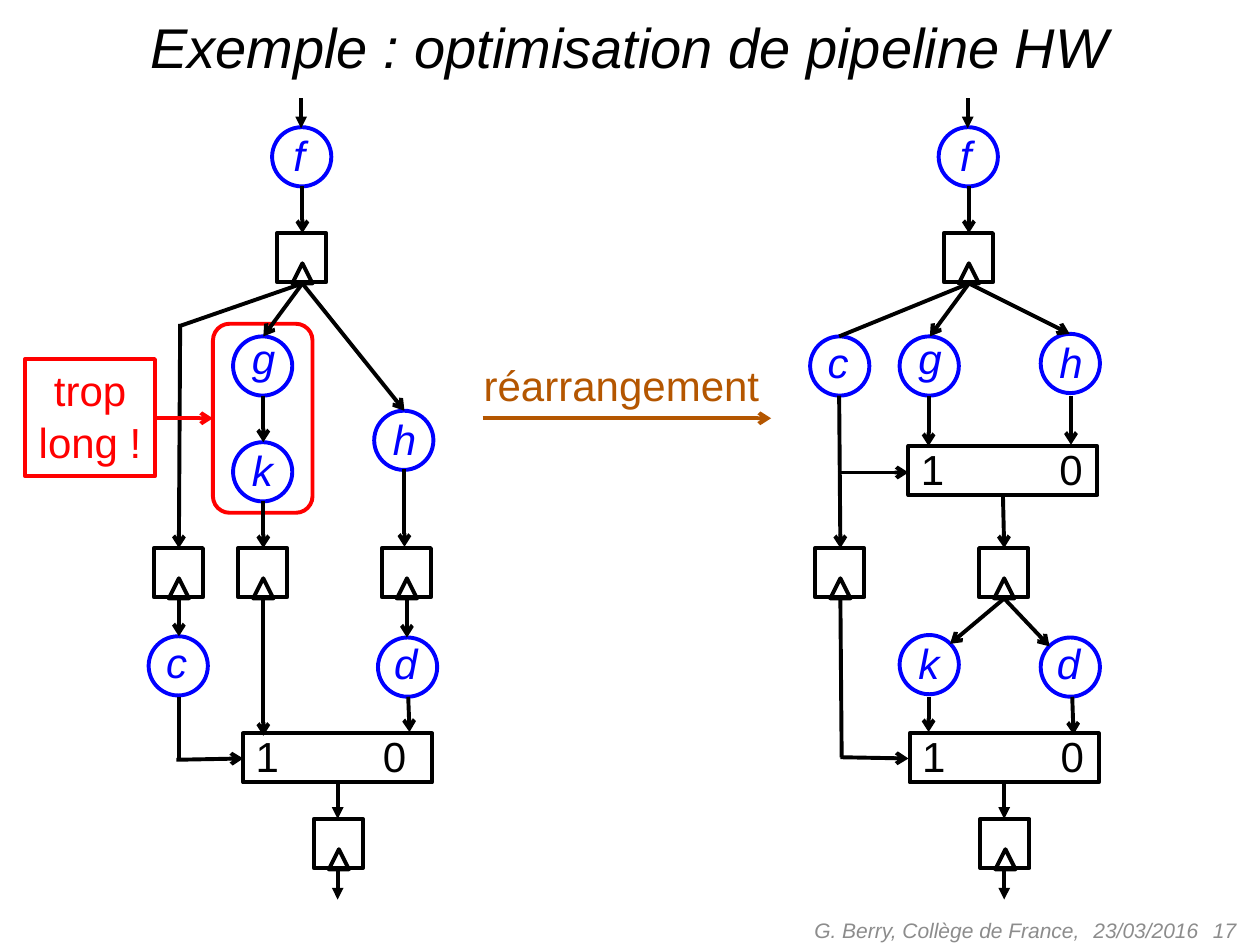
from lxml import etree
from pptx import Presentation
from pptx.dml.color import RGBColor
from pptx.enum.shapes import MSO_CONNECTOR as LINE, MSO_SHAPE as SHAPE
from pptx.enum.text import MSO_ANCHOR as ANCHOR, PP_ALIGN as ALIGN
from pptx.oxml.ns import qn
from pptx.util import Cm, Pt

INCH = 2.54
SHIFT = 5.29
COLORS = {"ink": "000000", "node": "0000FF", "alert": "FF0000",
          "step": "B45600", "footer": "8C8C8C"}
LABEL = {"margin_left": Cm(0.25), "margin_right": Cm(0.25),
         "margin_top": Cm(0.05), "margin_bottom": Cm(0.18)}


def add_outline(kind, x, y, w, h, color="ink"):
    sp = s.shapes.add_shape(kind, *[Cm(v * INCH) for v in (x, y, w, h)])
    sp.shadow.inherit = False
    sp.fill.background()
    sp.line.color.rgb = RGBColor.from_string(COLORS[color])
    sp.line.width = Pt(2.25)
    return sp


def add_text(text, x, y, w, h, color="ink", size=24, italic=False,
             align=ALIGN.LEFT, spacing=1.05, wrap=False, frame=LABEL, sp=None):
    if sp is None:
        sp = s.shapes.add_textbox(*[Cm(v * INCH) for v in (x, y, w, h)])
    tf = sp.text_frame
    for name, value in {"word_wrap": wrap, "vertical_anchor": ANCHOR.TOP, **frame}.items():
        setattr(tf, name, value)
    for i, line in enumerate(text.split("\n")):
        p = tf.add_paragraph() if i else tf.paragraphs[0]
        p.alignment, p.line_spacing = align, spacing
        r = p.add_run()
        r.text = line
        for name, value in {"name": "Arial", "size": Pt(size), "italic": italic}.items():
            setattr(r.font, name, value)
        r.font.color.rgb = RGBColor.from_string(COLORS[color])
    return sp


prs = Presentation()
prs.slide_width, prs.slide_height = Cm(25.4), Cm(19.05)
s = prs.slides.add_slide(prs.slide_layouts[6])

add_text("Exemple : optimisation de pipeline HW", 0.25, 0.05, 9.5, 0.64, size=32,
         italic=True, align=ALIGN.CENTER, spacing=1.0, wrap=True, frame={})
footer = [("G. Berry, Collège de France,", 5.5, 3.17, ALIGN.RIGHT),
          ("23/03/2016", 8.58, 1.33, ALIGN.LEFT),
          ("17", 7.58, 2.33, ALIGN.RIGHT)]
for text, x, w, align in footer:
    add_text(text, x, 7.18, w, 0.4, "footer", 12, True, align, 1.0, True,
             {"vertical_anchor": ANCHOR.MIDDLE})

registers = [(1.22, 4.35), (1.89, 4.35), (3.03, 4.35), (6.47, 4.35), (7.77, 4.35)]
muxes = [(7.21, 3.54, 1.1)]
nodes = [("g", 1.85, 2.67), ("k", 1.85, 3.51), ("h", 2.97, 3.26),
         ("c", 1.18, 5.05), ("d", 3.0, 5.06),
         ("c", 6.43, 2.67), ("g", 7.14, 2.67), ("h", 8.26, 2.65),
         ("k", 7.14, 5.04), ("d", 8.26, 5.06)]
links = [
    (2.4, 2.25, 3.21, 3.26, "arrow"), (2.4, 2.25, 1.42, 2.59, None),
    (1.43, 2.57, 1.42, 4.35, "arrow"), (2.09, 3.14, 2.09, 3.51, "arrow"),
    (2.09, 3.98, 2.09, 4.35, "arrow"), (3.21, 3.72, 3.21, 4.34, "arrow"),
    (1.42, 4.75, 1.42, 5.05, "arrow"), (2.09, 4.75, 2.09, 5.84, "arrow"),
    (3.23, 4.75, 3.23, 5.06, "arrow"), (1.42, 5.53, 1.42, 6.04, None),
    (1.4, 6.03, 1.93, 6.02, "arrow"), (3.24, 5.53, 3.25, 5.81, "arrow"),
    (7.69, 2.25, 8.49, 2.65, "arrow"), (7.69, 2.25, 6.66, 2.67, None),
    (6.66, 3.14, 6.67, 4.35, "arrow"), (7.37, 3.14, 7.37, 3.54, "arrow"),
    (8.5, 3.14, 8.5, 3.53, "arrow"), (6.65, 3.75, 7.21, 3.75, "arrow"),
    (7.96, 3.93, 7.97, 4.35, "arrow"), (7.97, 4.75, 7.54, 5.11, "arrow"),
    (7.97, 4.75, 8.33, 5.13, "arrow"), (7.37, 5.53, 7.37, 5.81, "arrow"),
    (8.51, 5.53, 8.52, 5.83, "arrow"), (6.67, 4.75, 6.68, 6.01, None),
    (6.67, 6.01, 7.21, 6.02, "arrow"),
]
links = [link + ("ink",) for link in links]

for dx, tab in ((0, 1.01), (SHIFT, 1.1)):
    nodes.append(("f", 2.16 + dx, 1.01))
    registers += [(2.2 + dx, 1.85), (2.49 + dx, 6.5)]
    muxes.append((1.93 + dx, 5.82, tab))
    for x1, y1, x2, y2, head in [
            (2.39, 0.78, 2.39, 1.02, "triangle"), (2.4, 1.48, 2.4, 1.85, "arrow"),
            (2.4, 2.25, 2.09, 2.67, "arrow"), (2.68, 6.21, 2.68, 6.5, "triangle"),
            (2.68, 6.9, 2.68, 7.14, "triangle")]:
        links.append((x1 + dx, y1, x2 + dx, y2, head, "ink"))

for x, y in registers:
    add_outline(SHAPE.RECTANGLE, x, y, 0.39, 0.39)
    add_outline(SHAPE.ISOSCELES_TRIANGLE, x + 0.12, y + 0.24, 0.16, 0.16)

for x, y, tab in muxes:
    add_outline(SHAPE.RECTANGLE, x, y, 1.5, 0.39)
    sp = add_text("1\t0", x, y - 0.06, 1.5, 0.51, wrap=True)
    pPr = sp.text_frame.paragraphs[0]._p.get_or_add_pPr()
    tabs = etree.SubElement(pPr, qn("a:tabLst"))
    etree.SubElement(tabs, qn("a:tab"), pos=str(Cm(tab * INCH)), algn="l")

label_boxes = {"f": (0.07, -0.02, 0.38), "g": (0.05, -0.07, 0.47), "k": (0.05, -0.02, 0.45),
               "h": (0.05, -0.02, 0.47), "c": (0.04, -0.04, 0.45), "d": (0.03, -0.04, 0.47)}
for letter, x, y in nodes:
    add_outline(SHAPE.OVAL, x, y, 0.47, 0.47, "node")
    dx, dy, w = label_boxes[letter]
    add_text(letter, x + dx, y + dy, w, 0.51, "node", italic=True)

add_outline(SHAPE.ROUNDED_RECTANGLE, 1.69, 2.57, 0.79, 1.5, "alert")
warning = (0.2, 2.85, 1.03, 0.93)
add_text("trop\nlong !", *warning, "alert", align=ALIGN.CENTER,
         sp=add_outline(SHAPE.RECTANGLE, *warning, "alert"))
add_text("réarrangement", 3.74, 2.81, 2.42, 0.51, "step")
links += [(1.22, 3.32, 1.69, 3.32, "arrow", "alert"),
          (3.83, 3.32, 6.12, 3.32, "arrow", "step")]

for *ends, head, color in links:
    c = s.shapes.add_connector(LINE.STRAIGHT, *[Cm(v * INCH) for v in ends])
    c.line.color.rgb = RGBColor.from_string(COLORS[color])
    c.line.width = Pt(2.25)
    if head:
        etree.SubElement(c.line._get_or_add_ln(), qn("a:tailEnd"), type=head)
    etree.SubElement(c._element.spPr, qn("a:effectLst"))

prs.save("out.pptx")
